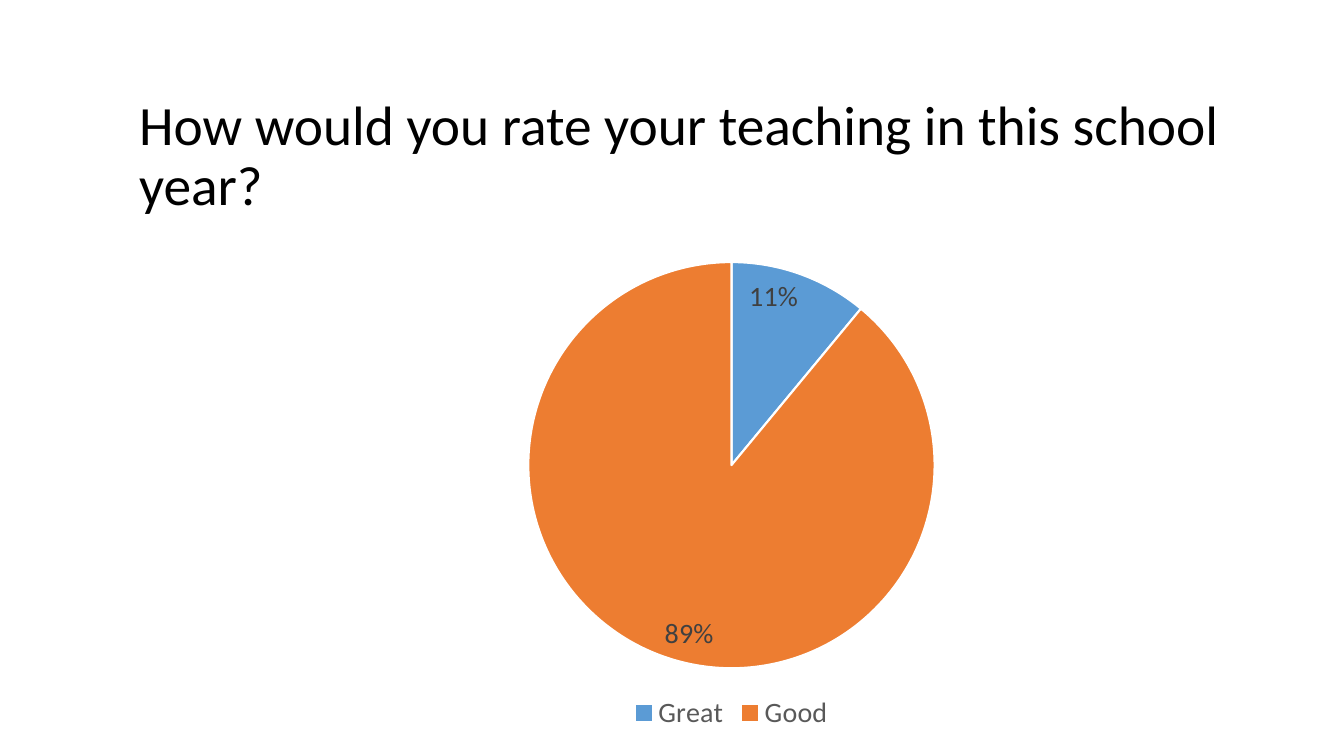
from dataclasses import dataclass

from lxml.etree import SubElement
from pptx import Presentation
from pptx.chart.data import CategoryChartData
from pptx.dml.color import RGBColor
from pptx.enum.chart import XL_CHART_TYPE as ChartType
from pptx.enum.chart import XL_LABEL_POSITION as LabelPosition
from pptx.enum.chart import XL_LEGEND_POSITION as LegendPosition
from pptx.enum.text import MSO_ANCHOR as Anchor
from pptx.enum.text import MSO_AUTO_SIZE as AutoSize
from pptx.enum.text import PP_ALIGN as Align
from pptx.oxml.ns import qn
from pptx.util import Inches, Pt


@dataclass(frozen=True)
class Theme:
    """Fonts, type sizes and colours of the slide."""

    font: str = "Calibri"
    title_size: float = 39.6
    chart_size: float = 20
    title: str = "000000"
    legend: str = "595959"
    label: str = "404040"
    border: str = "FFFFFF"
    slices: tuple = ("5B9BD5", "ED7D31")


THEME = Theme()
RATINGS = {"Great": 11, "Good": 89}


def style_font(font, size, color):
    """Apply the theme font with a size and a colour."""
    font.name = THEME.font
    font.size = Pt(size)
    font.color.rgb = RGBColor.from_string(color)


def fill_title(slide, text, left, top, width, height):
    """Place the question in the title placeholder."""
    title = slide.shapes.title
    title.left, title.top = Inches(left), Inches(top)
    title.width, title.height = Inches(width), Inches(height)
    frame = title.text_frame
    frame.word_wrap = True
    frame.auto_size = AutoSize.NONE
    frame.vertical_anchor = Anchor.MIDDLE
    paragraph = frame.paragraphs[0]
    paragraph.alignment = Align.LEFT
    paragraph.line_spacing = 0.9
    run = paragraph.add_run()
    run.text = text
    style_font(run.font, THEME.title_size, THEME.title)


def set_plot_layout(chart, **fractions):
    """Fix the inner plot area as fractions of the chart's box."""
    plot_area = chart.plots[0]._element.getparent()
    for layout in plot_area.findall(qn("c:layout")):
        plot_area.remove(layout)
    layout = SubElement(plot_area, qn("c:layout"))
    plot_area.insert(0, layout)
    manual = SubElement(layout, qn("c:manualLayout"))
    settings = {"layoutTarget": "inner", "xMode": "edge", "yMode": "edge", **fractions}
    for tag, value in settings.items():
        SubElement(manual, qn(f"c:{tag}")).set("val", str(value))


def add_rating_pie(slide, left, top, width, height):
    """Draw the ratings as a pie with percentages and a legend below."""
    data = CategoryChartData()
    data.categories = list(RATINGS)
    data.add_series("Series 1", list(RATINGS.values()))
    box = [Inches(length) for length in (left, top, width, height)]
    chart = slide.shapes.add_chart(ChartType.PIE, *box, data).chart
    style_font(chart.font, 10, THEME.title)
    chart.has_title = False
    chart.has_legend = True
    chart.legend.position = LegendPosition.BOTTOM
    chart.legend.include_in_layout = False
    style_font(chart.legend.font, THEME.chart_size, THEME.legend)

    plot = chart.plots[0]
    plot.vary_by_categories = True
    series = plot.series[0]
    for index, color in enumerate(THEME.slices):
        slice_format = series.points[index].format
        slice_format.fill.solid()
        slice_format.fill.fore_color.rgb = RGBColor.from_string(color)
        slice_format.line.color.rgb = RGBColor.from_string(THEME.border)
        slice_format.line.width = Pt(1.5)

    labels = series.data_labels
    labels.show_percentage = True
    labels.show_value = False
    labels.number_format = "0%"
    labels.number_format_is_linked = False
    labels.position = LabelPosition.INSIDE_END
    style_font(labels.font, THEME.chart_size, THEME.label)

    diameter = 4.03
    set_plot_layout(
        chart,
        x=round((1 - diameter / width) / 2, 4),
        y=round(0.48 / height, 4),
        w=round(diameter / width, 4),
        h=round(diameter / height, 4),
    )


def main():
    """Build the slide and save it."""
    presentation = Presentation()
    presentation.slide_width = Inches(13.33)
    presentation.slide_height = Inches(7.5)
    slide = presentation.slides.add_slide(presentation.slide_layouts[5])
    question = "How would you rate your teaching in this school year?"
    fill_title(slide, question, 1.28, 1.2, 11.5, 0.73)
    add_rating_pie(slide, 1.28, 2.12, 11.95, 5.18)
    presentation.save("out.pptx")


if __name__ == "__main__":
    main()
